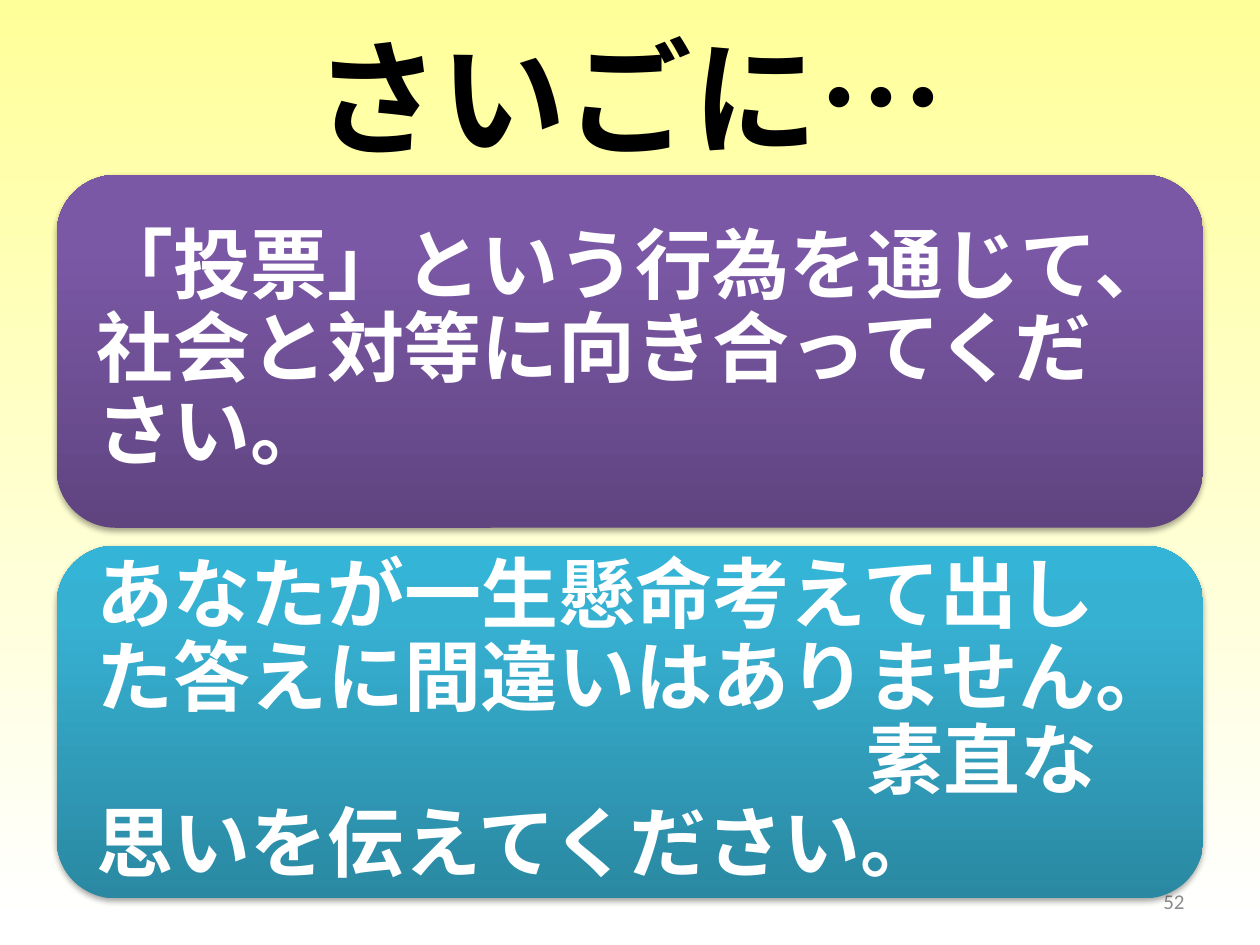
from copy import deepcopy

from lxml import etree
from pptx import Presentation
from pptx.dml.color import RGBColor
from pptx.enum import shapes, text
from pptx.oxml import ns
from pptx.util import Pt

JP_FONT = "Noto Sans CJK JP"
COLORS = {
    "black": "000000",
    "white": "FFFFFF",
    "yellow": "FFFF99",
    "grey": "8C8C8C",
}
# Gradient stops: position in percent, colour
BACKGROUND = [(0, COLORS["yellow"]), (98, COLORS["white"])]
PURPLE = [(0, "5F4480"), (80, "7B58A6"), (100, "7C57A8")]
TEAL = [(0, "2A88A2"), (80, "37B1D2"), (100, "34B4D6")]

PANEL_LEFT, PANEL_TOP = 32.4, 100
PANEL_WIDTH, PANEL_HEIGHT = 655.2, 201.6
PANEL_STEP = 211.8
PANEL_INSET = 10
CHAR = 44  # size of one full-width character in the panels

# Each paragraph: wording, first-line indent in characters
PANELS = [
    (PURPLE, [("「投票」という行為を通じて、社会と対等に向き合ってください。", 0)]),
    (TEAL, [("あなたが一生懸命考えて出した答えに間違いはありません。", 0),
            ("素直な思いを伝えてください。", 10)]),
]


def fill_gradient(fill, owner, stops, angle):
    """Fill with colour stops; angle is counter-clockwise."""
    fill.gradient()
    fill.gradient_angle = angle
    stop_list = owner.xpath(".//a:gsLst")[0]
    for _ in stops[2:]:
        stop_list.append(deepcopy(stop_list[-1]))
    for stop, (position, color) in zip(fill.gradient_stops, stops):
        stop.position = position / 100
        stop.color.rgb = RGBColor.from_string(color)


def add_shadow(shape):
    shape.shadow.inherit = False
    effects = shape.element.spPr.find(ns.qn("a:effectLst"))
    shadow = etree.SubElement(effects, ns.qn("a:outerShdw"), blurRad=str(Pt(3.1)),
                              dist=str(Pt(1.8)), dir="5400000", rotWithShape="0")
    color = etree.SubElement(shadow, ns.qn("a:srgbClr"), val=COLORS["black"])
    etree.SubElement(color, ns.qn("a:alpha"), val="35000")


def add_run(paragraph, wording, size, color, font=JP_FONT, bold=True):
    run = paragraph.add_run()
    run.text = wording
    run.font.size = Pt(size)
    run.font.bold = bold
    run.font.name = font
    run.font.color.rgb = RGBColor.from_string(color)
    etree.SubElement(run.font._element, ns.qn("a:ea"), typeface=font)


def add_text_frame(slide, left, top, width, height):
    box = slide.shapes.add_textbox(Pt(left), Pt(top), Pt(width), Pt(height))
    frame = box.text_frame
    frame.word_wrap = True
    frame.vertical_anchor = text.MSO_ANCHOR.MIDDLE
    return frame


def add_label(slide, bounds, align, *run_style, **run_options):
    paragraph = add_text_frame(slide, *bounds).paragraphs[0]
    paragraph.alignment = align
    add_run(paragraph, *run_style, **run_options)


def add_panel(slide, top, stops, paragraphs):
    # Rounded card
    card = slide.shapes.add_shape(
        shapes.MSO_SHAPE.ROUNDED_RECTANGLE,
        Pt(PANEL_LEFT), Pt(top), Pt(PANEL_WIDTH), Pt(PANEL_HEIGHT))
    fill_gradient(card.fill, card.element, stops, 90)
    card.line.fill.background()
    add_shadow(card)

    # Message on the card
    message = add_text_frame(slide, PANEL_LEFT + PANEL_INSET, top + PANEL_INSET,
                             PANEL_WIDTH - 2 * PANEL_INSET,
                             PANEL_HEIGHT - 2 * PANEL_INSET)
    message.margin_left = message.margin_right = Pt(13)
    message.margin_top = message.margin_bottom = Pt(6.5)
    for index, (wording, indent) in enumerate(paragraphs):
        paragraph = message.add_paragraph() if index else message.paragraphs[0]
        paragraph.alignment = text.PP_ALIGN.LEFT
        paragraph.line_spacing = 0.9
        if indent:
            paragraph._p.get_or_add_pPr().set("indent", str(Pt(indent * CHAR)))
        add_run(paragraph, wording, CHAR, COLORS["white"])


def main():
    deck = Presentation()
    deck.slide_width, deck.slide_height = Pt(720), Pt(540)
    slide = deck.slides.add_slide(deck.slide_layouts[6])
    fill_gradient(slide.background.fill, slide.element, BACKGROUND, 270)

    # Title and page number
    add_label(slide, (36, 9.4, 648, 90), text.PP_ALIGN.CENTER,
              "さいごに…", 72, COLORS["black"])
    add_label(slide, (516, 500.5, 168, 28.8), text.PP_ALIGN.RIGHT,
              "52", 12, COLORS["grey"], font="Calibri", bold=False)

    # Closing messages
    for row, (stops, paragraphs) in enumerate(PANELS):
        add_panel(slide, PANEL_TOP + row * PANEL_STEP, stops, paragraphs)

    deck.save("out.pptx")


if __name__ == "__main__":
    main()
